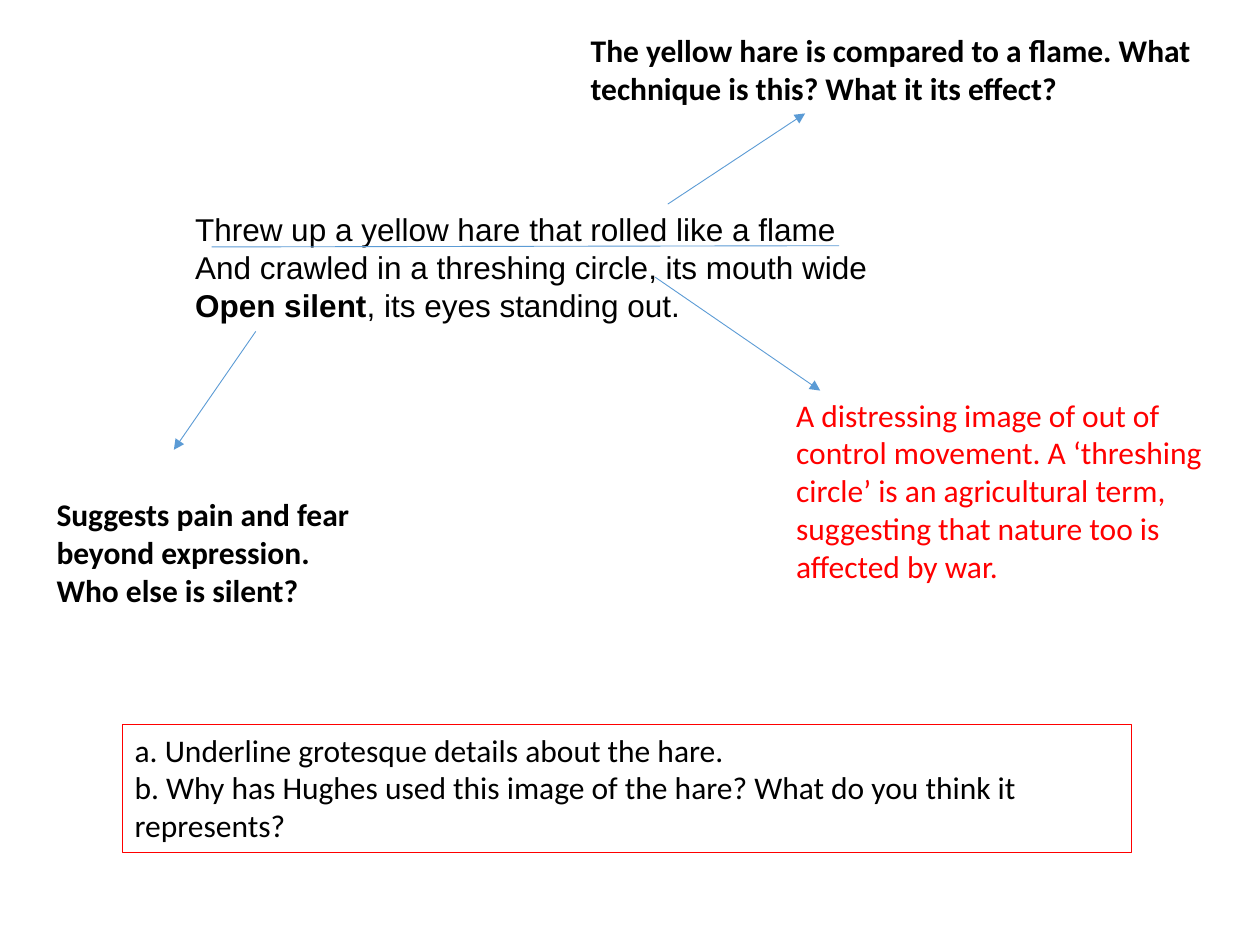
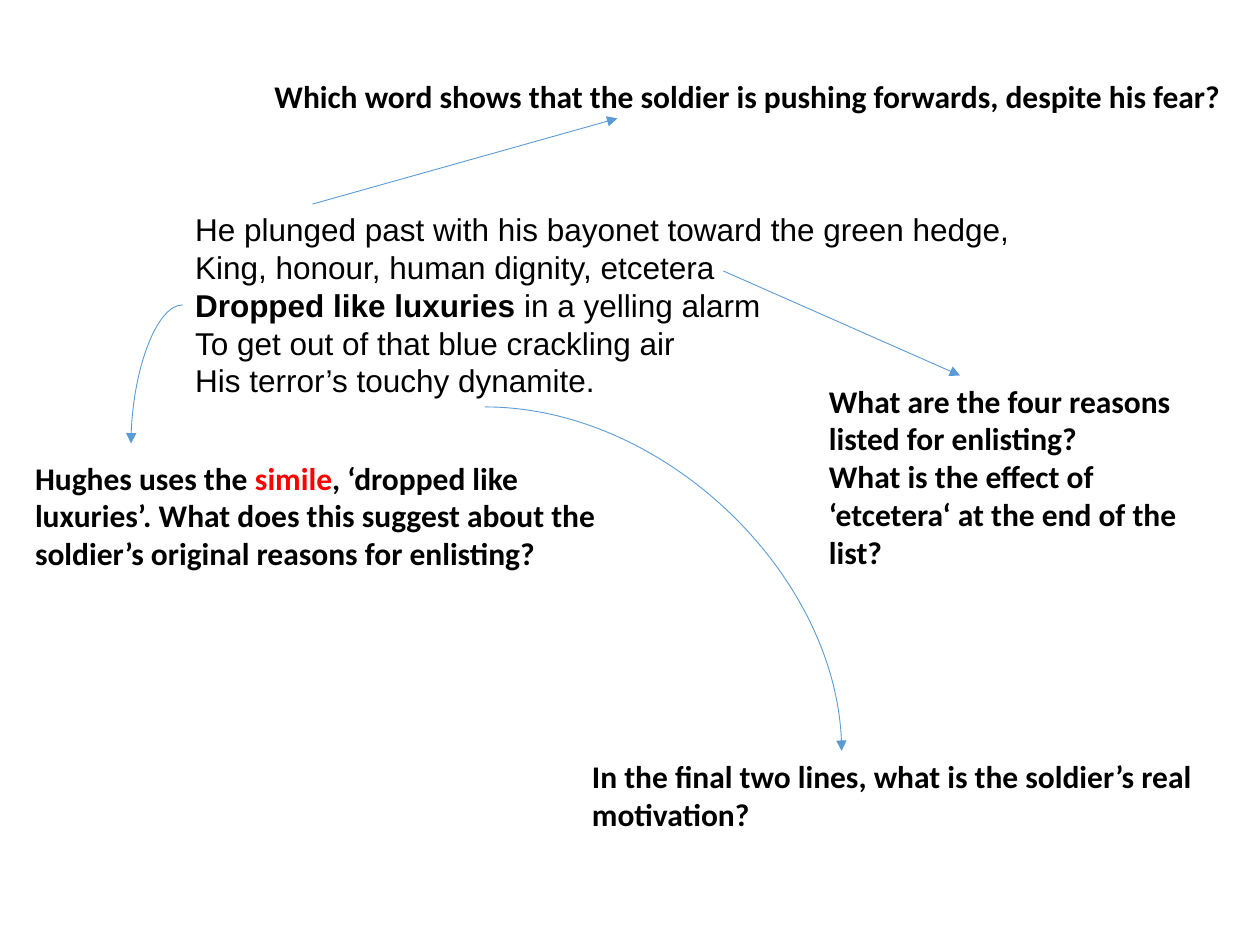
from pptx import Presentation
from pptx.dml.color import RGBColor
from pptx.enum.shapes import MSO_CONNECTOR, MSO_SHAPE
from pptx.enum.text import MSO_ANCHOR, MSO_AUTO_SIZE, PP_ALIGN
from pptx.oxml.ns import qn
from pptx.oxml.xmlchemy import OxmlElement
from pptx.util import Inches, Pt

STRAIGHT, CURVE = MSO_CONNECTOR.STRAIGHT, MSO_CONNECTOR.CURVE
RECTANGLE = MSO_SHAPE.RECTANGLE
TOP, LEFT = MSO_ANCHOR.TOP, PP_ALIGN.LEFT
GROW = MSO_AUTO_SIZE.SHAPE_TO_FIT_TEXT

COLORS = {"ink": "000000", "accent": "FF0000", "arrow": "5B9BD5"}
POEM_FONT, NOTE_FONT = "Arial", "Calibri"
TEXT_SIZE = Pt(18)
WIDTH, HEIGHT = Inches(10), Inches(7.5)
COLUMNS, ROWS = 100, 75
LINE_ROWS, PADDING_ROWS = 3.05, 1
POEM_LEFT, POEM_TOP, POEM_WIDTH = 14.5, 16.2, 68.9


def rgb(name):
    """Look up a named colour."""
    return RGBColor.from_string(COLORS[name])


def grid(column, row):
    """Turn a grid position into slide lengths."""
    return round(WIDTH * column / COLUMNS), round(HEIGHT * row / ROWS)


def area(left, top, width, lines):
    """Place a box that is tall enough for a number of text lines."""
    return *grid(left, top), *grid(width, lines * LINE_ROWS + PADDING_ROWS)


def write(shape, paragraphs, font, bold=False, color="ink"):
    """Fill a shape with paragraphs, each a list of (text, changes) runs."""
    tf = shape.text_frame
    tf.word_wrap = True
    tf.auto_size = GROW
    tf.vertical_anchor = TOP
    for i, runs in enumerate(paragraphs):
        p = tf.add_paragraph() if i else tf.paragraphs[0]
        p.alignment = LEFT
        for text, changes in runs:
            r = p.add_run()
            r.text = text
            r.font.name = font
            r.font.size = TEXT_SIZE
            r.font.bold = changes.get("bold", bold)
            r.font.color.rgb = rgb(changes.get("color", color))


def plain(*texts):
    """Make one single-run paragraph for each text."""
    return [[(text, {})] for text in texts]


def add_poem(s, paragraphs):
    """Add the quoted lines of verse at their shared place."""
    box = area(POEM_LEFT, POEM_TOP, POEM_WIDTH, len(paragraphs))
    write(s.shapes.add_textbox(*box), paragraphs, POEM_FONT)


def add_note(s, box, paragraphs, bold=True, color="ink"):
    """Add an annotation beside the verse."""
    write(s.shapes.add_textbox(*area(*box)), paragraphs, NOTE_FONT, bold, color)


def add_task(s, box, paragraphs):
    """Add a framed task box."""
    sp = s.shapes.add_shape(RECTANGLE, *area(*box))
    sp.shadow.inherit = False
    sp.fill.background()
    sp.line.color.rgb = rgb("accent")
    sp.line.width = Pt(0.75)
    write(sp, paragraphs, NOTE_FONT)


def add_line(s, start, end, kind=STRAIGHT, arrow=True):
    """Draw a thin connector, with an arrowhead unless told otherwise."""
    c = s.shapes.add_connector(kind, *grid(*start), *grid(*end))
    c.line.color.rgb = rgb("arrow")
    c.line.width = Pt(0.5)
    props = c._element.spPr
    if kind == CURVE:
        props.find(qn("a:prstGeom")).set("prst", "curvedConnector2")
    if arrow:
        tail = OxmlElement("a:tailEnd")
        tail.set("type", "triangle")
        props.find(qn("a:ln")).append(tail)
    props.append(OxmlElement("a:effectLst"))


def build_hare(s):
    """Annotate the verse about the hare."""
    add_poem(s, [
        *plain("Threw up a yellow hare that rolled like a flame",
               "And crawled in a threshing circle, its mouth wide"),
        [("Open silent", {"bold": True}), (", its eyes standing out.", {})],
    ])
    add_note(s, (45.9, 2, 50, 2), plain(
        "The yellow hare is compared to a flame. What technique is this? "
        "What it its effect?"))
    add_line(s, (53, 16.2), (63.9, 9))
    add_line(s, (16.8, 19.6), (66.6, 19.5), arrow=False)
    add_note(s, (62.2, 30.9, 35.8, 5), plain(
        "A distressing image of out of control movement. A ‘threshing circle’ "
        "is an agricultural term, suggesting that nature too is affected by war."),
        bold=False, color="accent")
    add_line(s, (52, 22), (65.1, 31))
    add_line(s, (20.3, 26.3), (13.8, 35.7))
    add_note(s, (3.5, 38.8, 28.2, 3), plain(
        "Suggests pain and fear beyond expression.", "Who else is silent?"))
    add_task(s, (9.7, 57.5, 80.1, 3), plain(
        "a. Underline grotesque details about the hare.",
        "b. Why has Hughes used this image of the hare? "
        "What do you think it represents?"))


def build_soldier(s):
    """Annotate the verse about the soldier."""
    add_poem(s, [
        *plain("He plunged past with his bayonet toward the green hedge,",
               "King, honour, human dignity, etcetera"),
        [("Dropped like luxuries ", {"bold": True}), ("in a yelling alarm", {})],
        *plain("To get out of that blue crackling air",
               "His terror’s touchy dynamite."),
    ])
    add_note(s, (20.8, 5.6, 80.8, 1), plain(
        "Which word shows that the soldier is pushing forwards, despite his fear?"))
    add_line(s, (24.8, 16.2), (49, 9.4))
    add_line(s, (57.4, 21.5), (76.2, 29.8))
    add_note(s, (64.8, 29.8, 33.1, 5), plain(
        "What are the four reasons listed for enlisting?",
        "What is the effect of ‘etcetera‘ at the end of the list?"))
    add_note(s, (1.8, 35.9, 50, 3), [[
        ("Hughes uses the ", {}),
        ("simile", {"color": "accent"}),
        (", ‘dropped like luxuries’. What does this suggest about the "
         "soldier’s original reasons for enlisting?", {}),
    ]])
    add_line(s, (14.5, 24.2), (10.4, 35.2), CURVE)
    add_note(s, (46, 59.6, 50, 2), plain(
        "In the final two lines, what is the soldier’s real motivation?"))
    add_line(s, (38.5, 32.3), (66.8, 59.6), CURVE)


def main():
    """Build and save both slides."""
    prs = Presentation()
    prs.slide_width, prs.slide_height = WIDTH, HEIGHT
    blank = prs.slide_layouts[6]
    for build in (build_hare, build_soldier):
        build(prs.slides.add_slide(blank))
    prs.save("out.pptx")


if __name__ == "__main__":
    main()
